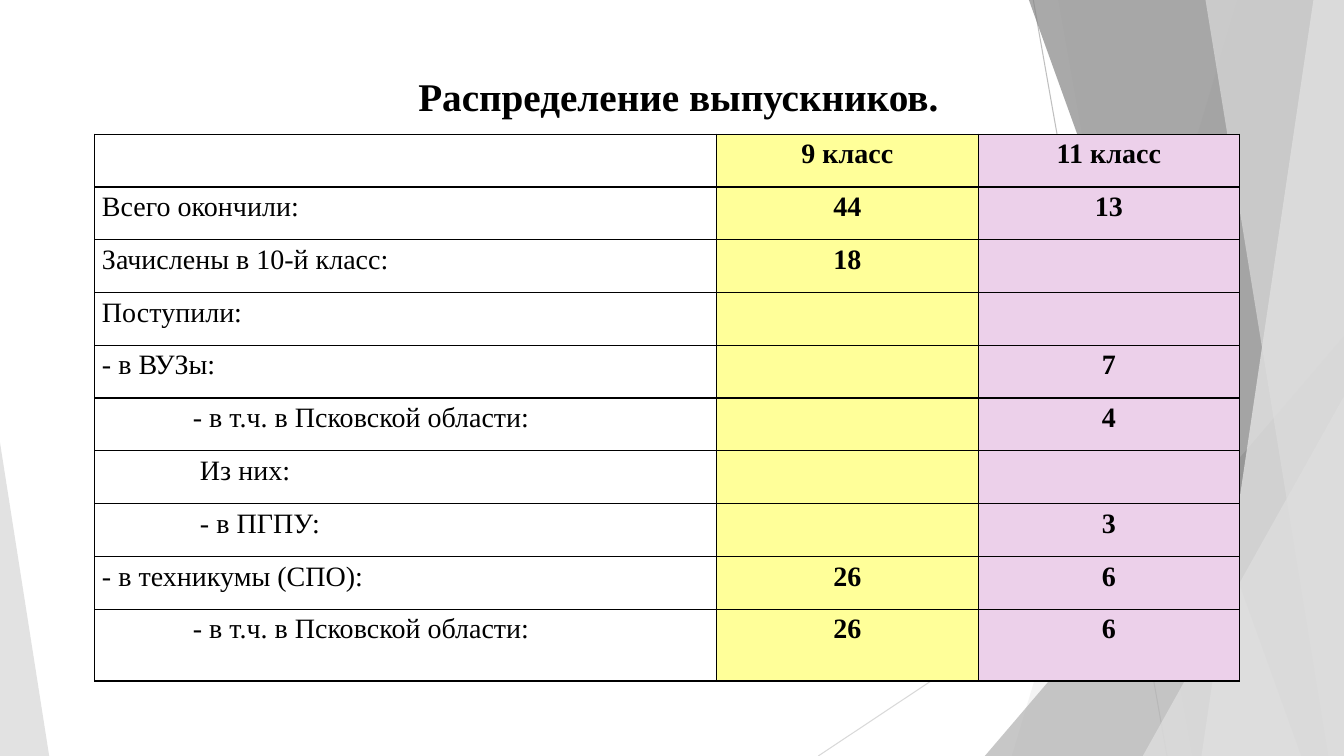
from dataclasses import dataclass

from lxml import etree
from pptx import Presentation
from pptx import util as u
from pptx.dml.color import RGBColor
from pptx.enum import shapes, text
from pptx.oxml import ns

BLACK = RGBColor(0x00, 0x00, 0x00)
YELLOW = RGBColor(0xFF, 0xFF, 0x99)
PINK = RGBColor(0xEC, 0xD0, 0xEA)
LIGHT = RGBColor(0xDD, 0xDD, 0xDD)
PALE = RGBColor(0xEB, 0xEB, 0xEB)
MID = RGBColor(0xB2, 0xB2, 0xB2)
DARK = RGBColor(0x85, 0x85, 0x85)
RAY_DARK = RGBColor(0xBF, 0xBF, 0xBF)
RAY_LIGHT = RGBColor(0xD9, 0xD9, 0xD9)

FONT = "Times New Roman"
WIDTH, HEIGHT = 33.87, 19.05
CELL_MARGIN = 0.18


@dataclass
class Ray:
    x1: float
    y1: float
    x2: float
    y2: float
    color: RGBColor


@dataclass
class Band:
    """Full-height area reaching the right edge, with a slanted left side."""
    top_x: float
    bottom_x: float
    color: RGBColor
    opacity: int


@dataclass
class Wedge:
    """Triangle standing on the bottom edge."""
    left: float
    top: float
    width: float
    apex: float
    color: RGBColor
    opacity: int


@dataclass
class Row:
    label: str = ""
    grade9: str = ""
    grade11: str = ""
    indent: float = 0


RAYS = [Ray(26.04, 0, 29.41, HEIGHT, RAY_DARK),
        Ray(WIDTH, 10.24, 20.62, HEIGHT, RAY_LIGHT)]
FACETS = [
    Band(31.19, 25.5, LIGHT, 30),
    Band(26.67, 30.05, LIGHT, 20),
    Wedge(24.82, 8.46, 9.05, 1, MID, 72),
    Band(25.93, 32.79, DARK, 70),
    Band(33.1, 30.28, PALE, 70),
    Band(30.38, 33.48, LIGHT, 65),
    Wedge(28.8, 9.98, 5.07, 1, LIGHT, 80),
    Wedge(0, 11.15, 1.24, 0, LIGHT, 85),
]
ROWS = [
    Row("", "9 класс", "11 класс"),
    Row("Всего окончили:", "44", "13"),
    Row("Зачислены в 10-й класс:", "18"),
    Row("Поступили:"),
    Row("- в ВУЗы:", "", "7"),
    Row("- в т.ч. в Псковской области:", "", "4", indent=2.29),
    Row("Из них:", indent=2.47),
    Row("- в ПГПУ:", "", "3", indent=2.47),
    Row("- в техникумы (СПО):", "26", "6"),
    Row("- в т.ч. в Псковской области:", "26", "6", indent=2.29),
]
COLUMN_WIDTHS = [15.67, 6.59, 6.59]
COLUMN_FILLS = [None, YELLOW, PINK]
ROW_HEIGHT, LAST_ROW_HEIGHT = 1.33, 1.81


def write(tf, content: str, *, size: float, bold: bool = False,
          align=text.PP_ALIGN.LEFT, spacing: float = 1.0) -> None:
    p = tf.paragraphs[0]
    p.alignment = align
    p.line_spacing = spacing
    r = p.add_run()
    r.text = content
    r.font.name = FONT
    r.font.size = u.Pt(size)
    r.font.bold = bold
    r.font.color.rgb = BLACK


def draw_ray(s, ray: Ray) -> None:
    line = s.shapes.add_connector(shapes.MSO_CONNECTOR.STRAIGHT, u.Cm(ray.x1),
                                  u.Cm(ray.y1), u.Cm(ray.x2), u.Cm(ray.y2))
    line.line.color.rgb = ray.color
    line.line.width = u.Pt(0.75)
    etree.SubElement(line._element.spPr, ns.qn("a:effectLst"))


def draw_facet(s, facet: Band | Wedge) -> None:
    if isinstance(facet, Band):
        outline = s.shapes.build_freeform(u.Cm(facet.top_x), 0)
        corners = [(WIDTH, 0), (WIDTH, HEIGHT), (facet.bottom_x, HEIGHT)]
        outline.add_line_segments([(u.Cm(x), u.Cm(y)) for x, y in corners])
        sp = outline.convert_to_shape()
    else:
        sp = s.shapes.add_shape(shapes.MSO_SHAPE.ISOSCELES_TRIANGLE,
                                u.Cm(facet.left), u.Cm(facet.top),
                                u.Cm(facet.width), u.Cm(HEIGHT - facet.top))
        sp.adjustments[0] = facet.apex
    sp.shadow.inherit = False
    sp.line.fill.background()
    sp.fill.solid()
    sp.fill.fore_color.rgb = facet.color
    color = sp._element.spPr.find(".//" + ns.qn("a:srgbClr"))
    etree.SubElement(color, ns.qn("a:alpha"), val=str(facet.opacity * 1000))


def add_borders(cell) -> None:
    tc_pr = cell._tc.get_or_add_tcPr()
    for side in ("lnL", "lnR", "lnT", "lnB"):
        ln = etree.SubElement(tc_pr, ns.qn("a:" + side), w=str(u.Pt(1)))
        fill = etree.SubElement(ln, ns.qn("a:solidFill"))
        etree.SubElement(fill, ns.qn("a:srgbClr"), val=str(BLACK))


def draw_table(s) -> None:
    height = ROW_HEIGHT * (len(ROWS) - 1) + LAST_ROW_HEIGHT
    table = s.shapes.add_table(len(ROWS), len(COLUMN_WIDTHS), u.Cm(2.39), u.Cm(3.38),
                               u.Cm(sum(COLUMN_WIDTHS)), u.Cm(height)).table
    table.first_row = table.horz_banding = False
    for column, width in zip(table.columns, COLUMN_WIDTHS):
        column.width = u.Cm(width)
    for i, row in enumerate(ROWS):
        table.rows[i].height = u.Cm(ROW_HEIGHT if i < len(ROWS) - 1 else LAST_ROW_HEIGHT)
        for j, content in enumerate((row.label, row.grade9, row.grade11)):
            cell = table.cell(i, j)
            add_borders(cell)
            if COLUMN_FILLS[j] is None:
                cell.fill.background()
            else:
                cell.fill.solid()
                cell.fill.fore_color.rgb = COLUMN_FILLS[j]
            cell.margin_top = cell.margin_bottom = 0
            cell.margin_left = u.Cm(CELL_MARGIN + (row.indent if j == 0 else 0))
            cell.margin_right = u.Cm(CELL_MARGIN)
            if content:
                align = text.PP_ALIGN.CENTER if j else text.PP_ALIGN.LEFT
                write(cell.text_frame, content, size=20, bold=j > 0,
                      align=align, spacing=1.15)


def main() -> None:
    prs = Presentation()
    prs.slide_width, prs.slide_height = u.Cm(WIDTH), u.Cm(HEIGHT)
    s = prs.slides.add_slide(prs.slide_layouts[6])

    # Background decoration
    for ray in RAYS:
        draw_ray(s, ray)
    for facet in FACETS:
        draw_facet(s, facet)

    # Title
    tf = s.shapes.add_textbox(u.Cm(1.88), u.Cm(1.7), u.Cm(30.43), u.Cm(1.42)).text_frame
    tf.word_wrap = True
    tf.vertical_anchor = text.MSO_ANCHOR.MIDDLE
    write(tf, "Распределение выпускников.", size=28, bold=True,
          align=text.PP_ALIGN.CENTER)

    # Table of graduates
    draw_table(s)
    prs.save("out.pptx")


if __name__ == "__main__":
    main()
